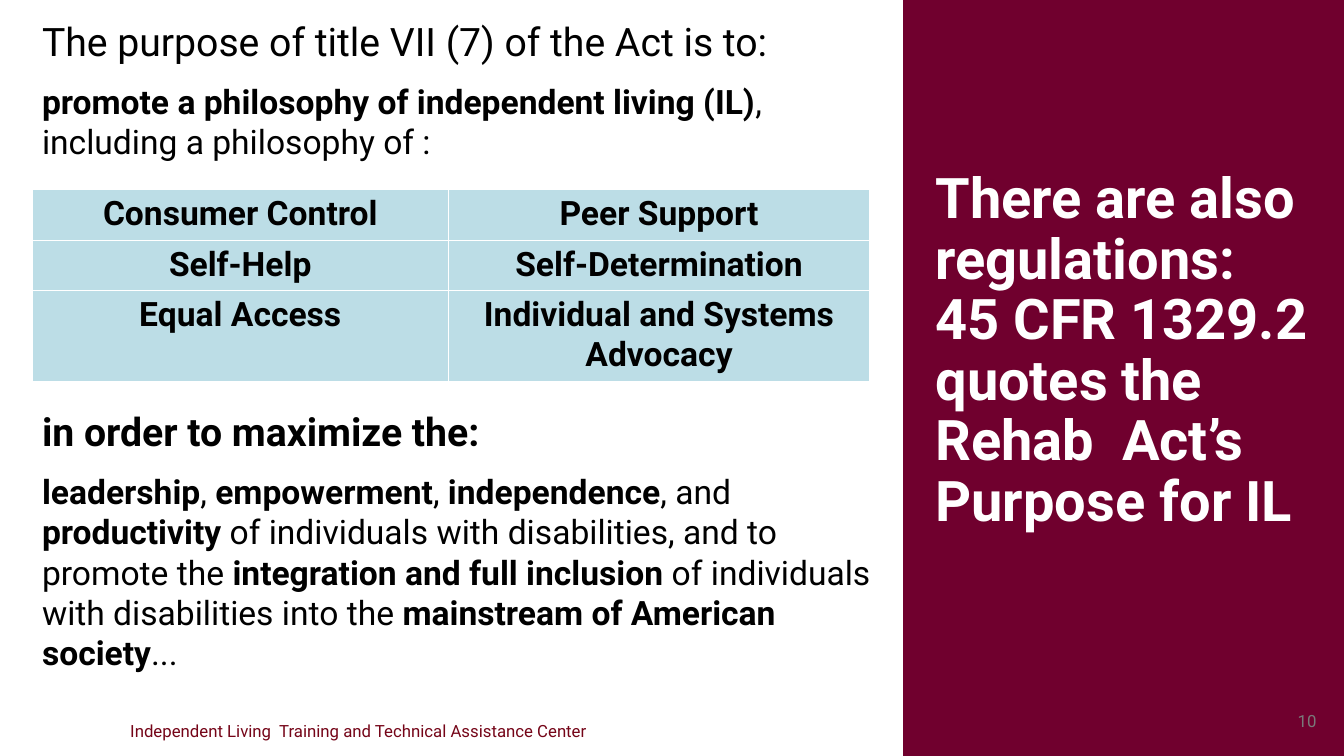
import pptx
import pptx.util
import pptx.oxml
import pptx.oxml.ns
import pptx.dml.color
import pptx.enum.shapes
import pptx.enum.text

Cm, Pt = pptx.util.Cm, pptx.util.Pt
ALIGN = pptx.enum.text.PP_ALIGN
ANCHOR = pptx.enum.text.MSO_ANCHOR

FONT = "Roboto"
COLORS = {
    "panel": "70002E", "title": "FFFFFF", "text": "000000", "cell": "BCDDE6",
    "border": "FFFFFF", "footer": "750518", "number": "797979",
}

TITLE_LINES = ["There are also regulations:", "45 CFR 1329.2 quotes the Rehab  Act’s Purpose for IL"]
PURPOSE = [
    (28, [("The purpose of title VII (7) of the Act is to:", False)]),
    (24, [("promote a philosophy of independent living (IL)", True),
          (", including a philosophy of :", False)]),
]
PHILOSOPHY = [
    ("Consumer Control", "Peer Support"),
    ("Self-Help", "Self-Determination"),
    ("Equal Access", "Individual and Systems Advocacy"),
]
GOALS = [
    (28, [("in order to maximize the:", True)]),
    (24, [("leadership", True), (", ", False), ("empowerment", True), (", ", False),
          ("independence", True), (", and ", False), ("productivity", True),
          (" of individuals with disabilities, and to promote the", False),
          (" integration and full inclusion", True),
          (" of individuals with disabilities into the ", False),
          ("mainstream of American society", True), ("...", False)]),
]
FOOTER = [(12, [("Independent Living  Training and Technical Assistance Center", False)])]
NUMBER = [(12, [("10", False)])]

SLIDE_WIDTH, SLIDE_HEIGHT = 33.87, 19.05
PANEL_LEFT = 22.76
MARGIN = 0.81
BODY_WIDTH = 21.51
COLUMN_WIDTHS = [10.49, 10.62]
ROW_HEIGHTS = [1.24, 1.24, 2.28]


def color(name):
    return pptx.dml.color.RGBColor.from_string(COLORS[name])


def add_run(para, text, size, bold, color_name):
    run = para.add_run()
    run.text = text
    run.font.name = FONT
    run.font.size = Pt(size)
    run.font.bold = bold
    run.font.color.rgb = color(color_name)


def add_text(slide, place, paragraphs, color_name="text", align=ALIGN.LEFT, anchor=ANCHOR.TOP):
    frame = slide.shapes.add_textbox(*map(Cm, place)).text_frame
    frame.word_wrap = True
    frame.vertical_anchor = anchor
    for index, (size, spans) in enumerate(paragraphs):
        para = frame.add_paragraph() if index else frame.paragraphs[0]
        para.alignment = align
        para.space_before = Pt(12 if index else 0)
        for text, bold in spans:
            add_run(para, text, size, bold, color_name)


def add_panel(slide):
    panel = slide.shapes.add_shape(
        pptx.enum.shapes.MSO_SHAPE.RECTANGLE,
        Cm(PANEL_LEFT), 0, Cm(SLIDE_WIDTH - PANEL_LEFT), Cm(SLIDE_HEIGHT))
    panel.shadow.inherit = False
    panel.fill.solid()
    panel.fill.fore_color.rgb = color("panel")
    panel.line.fill.background()
    slide.shapes.title.element.addprevious(panel.element)


def format_title(title):
    title.left, title.top, title.width, title.height = map(Cm, (23.32, 0.79, 10.08, 12.78))
    frame = title.text_frame
    frame.word_wrap = True
    frame.auto_size = pptx.enum.text.MSO_AUTO_SIZE.NONE
    frame.vertical_anchor = ANCHOR.BOTTOM
    para = frame.paragraphs[0]
    para.alignment = ALIGN.LEFT
    para.line_spacing = 0.9
    for index, line in enumerate(TITLE_LINES):
        if index:
            para.add_line_break()
        add_run(para, line, 40, True, "title")


def add_borders(cell):
    properties = cell._tc.get_or_add_tcPr()
    for position, side in enumerate(("lnL", "lnR", "lnT", "lnB")):
        properties.insert(position, pptx.oxml.parse_xml(
            f'<a:{side} {pptx.oxml.ns.nsdecls("a")} w="12700"><a:solidFill>'
            f'<a:srgbClr val="{COLORS["border"]}"/></a:solidFill></a:{side}>'))


def add_philosophy_table(slide):
    table = slide.shapes.add_table(
        len(PHILOSOPHY), len(COLUMN_WIDTHS), Cm(MARGIN), Cm(4.78),
        Cm(sum(COLUMN_WIDTHS)), Cm(sum(ROW_HEIGHTS))).table
    table.horz_banding = False
    for column, width in zip(table.columns, COLUMN_WIDTHS):
        column.width = Cm(width)
    for row, height, texts in zip(table.rows, ROW_HEIGHTS, PHILOSOPHY):
        row.height = Cm(height)
        for cell, text in zip(row.cells, texts):
            cell.fill.solid()
            cell.fill.fore_color.rgb = color("cell")
            add_borders(cell)
            para = cell.text_frame.paragraphs[0]
            para.alignment = ALIGN.CENTER
            add_run(para, text, 24, True, "text")


def main():
    deck = pptx.Presentation()
    deck.slide_width, deck.slide_height = Cm(SLIDE_WIDTH), Cm(SLIDE_HEIGHT)
    slide = deck.slides.add_slide(deck.slide_layouts[5])
    add_panel(slide)
    format_title(slide.shapes.title)
    add_text(slide, (MARGIN, 0.3, BODY_WIDTH, 4.2), PURPOSE)
    add_philosophy_table(slide)
    add_text(slide, (MARGIN, 10.13, BODY_WIDTH, 7.2), GOALS)
    add_text(slide, (MARGIN, 17.91, 16.46, 1.02), FOOTER, "footer", ALIGN.CENTER, ANCHOR.MIDDLE)
    add_text(slide, (25.81, 17.65, 7.62, 1.02), NUMBER, "number", ALIGN.RIGHT, ANCHOR.MIDDLE)
    deck.save("out.pptx")


if __name__ == "__main__":
    main()
